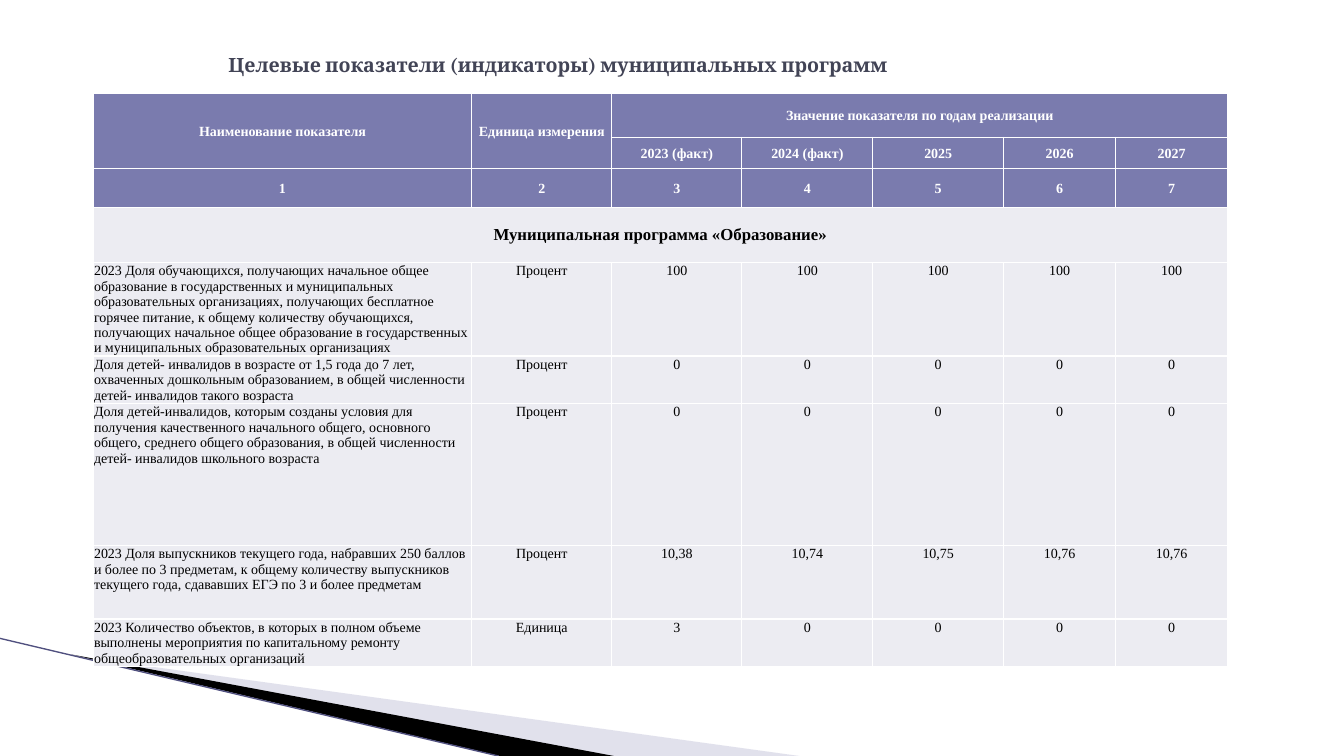
from collections import namedtuple

from lxml import etree
from pptx import Presentation, util as u
from pptx.dml.color import RGBColor
from pptx.enum import shapes, text
from pptx.oxml import ns

Box = namedtuple("Box", "left top width height")

COLORS = {
    "title": "424456", "header": "7A7BAE", "body": "ECECF2", "white": "FFFFFF",
    "black": "000000", "wedge": "B6B6D1", "line": "50507F",
}
COLUMN_WIDTHS = [270.5, 100, 93, 93.5, 93.5, 80, 80]
ROW_HEIGHTS = [31.5, 22.5, 27.5, 39.5, 57.5, 31, 101.5, 52.5, 31]
YEARS = ["2023 (факт)", "2024 (факт)", "2025", "2026", "2027"]
HEADER_ROWS = 3
SECTION_ROW = 3
INDICATORS = [
    ("2023 Доля обучающихся, получающих начальное общее образование в государственных "
     "и муниципальных образовательных организациях, получающих бесплатное горячее "
     "питание, к общему количеству обучающихся, получающих начальное общее образование "
     "в государственных и муниципальных образовательных организациях",
     "Процент", "100", "100", "100", "100", "100"),
    ("Доля детей- инвалидов в возрасте от 1,5 года до 7 лет, охваченных дошкольным "
     "образованием, в общей численности детей- инвалидов такого возраста",
     "Процент", "0", "0", "0", "0", "0"),
    ("Доля детей-инвалидов, которым созданы условия для получения качественного "
     "начального общего, основного общего, среднего общего образования, в общей "
     "численности детей- инвалидов школьного возраста",
     "Процент", "0", "0", "0", "0", "0"),
    ("2023 Доля выпускников текущего года, набравших 250 баллов и более по 3 предметам, "
     "к общему количеству выпускников текущего года, сдававших ЕГЭ по 3 и более предметам",
     "Процент", "10,38", "10,74", "10,75", "10,76", "10,76"),
    ("2023 Количество объектов, в которых в полном объеме выполнены мероприятия по "
     "капитальному ремонту общеобразовательных организаций",
     "Единица", "3", "0", "0", "0", "0"),
]


def color(name):
    return RGBColor.from_string(COLORS[name])


def write(frame, words, font="Times New Roman", size=10, bold=False, ink="black",
          align=text.PP_ALIGN.CENTER):
    para = frame.paragraphs[0]
    para.alignment = align
    span = para.add_run()
    span.text = words
    span.font.name = font
    span.font.size = u.Pt(size)
    span.font.bold = bold
    span.font.color.rgb = color(ink)


def add_wedge(page, box, points, fill, opacity=100):
    """Draw a polygon whose points are offsets from the corner of the box."""
    corners = [(u.Pt(box.left + x), u.Pt(box.top + y)) for x, y in points]
    builder = page.shapes.build_freeform(*corners[0], scale=1)
    builder.add_line_segments(corners[1:], close=True)
    wedge = builder.convert_to_shape()
    wedge.shadow.inherit = False
    wedge.line.fill.background()
    wedge.fill.solid()
    wedge.fill.fore_color.rgb = color(fill)
    if opacity < 100:
        tint = wedge.fill._xPr.find(".//" + ns.qn("a:srgbClr"))
        etree.SubElement(tint, ns.qn("a:alpha"), val=str(opacity * 1000))


def add_corner_decoration(page, box):
    bottom = box.height
    add_wedge(page, box, [(52.5, 12.5), (571, bottom), (438, bottom)], "wedge", 40)
    add_wedge(page, box, [(51, 11.5), (438.5, bottom), (357, bottom)], "black")
    line = page.shapes.add_connector(
        shapes.MSO_CONNECTOR.STRAIGHT, u.Pt(box.left), u.Pt(box.top),
        u.Pt(box.left + 356), u.Pt(box.top + bottom))
    line.line.color.rgb = color("line")
    line.line.width = u.Pt(0.95)
    etree.SubElement(line._element.spPr, ns.qn("a:effectLst"))


def add_title(page, box):
    title = page.shapes.title
    title.left, title.top, title.width, title.height = (u.Pt(side) for side in box)
    title.text_frame.vertical_anchor = text.MSO_ANCHOR.MIDDLE
    title.text_frame.word_wrap = True
    write(title.text_frame, "Целевые показатели (индикаторы) муниципальных программ",
          font="Cambria", size=14, bold=True, ink="title", align=text.PP_ALIGN.LEFT)


def format_cell(cell, fill, anchor):
    properties = cell._tc.get_or_add_tcPr()
    for side in ("lnL", "lnR", "lnT", "lnB"):
        border = etree.SubElement(properties, ns.qn("a:" + side), w=str(u.Pt(1)))
        paint = etree.SubElement(border, ns.qn("a:solidFill"))
        etree.SubElement(paint, ns.qn("a:srgbClr"), val=COLORS["white"])
    cell.fill.solid()
    cell.fill.fore_color.rgb = color(fill)
    cell.vertical_anchor = anchor
    cell.margin_left = cell.margin_right = cell.margin_top = u.Pt(0.7)
    cell.margin_bottom = 0


def add_indicator_table(page, box):
    rows = [
        ["Наименование показателя", "Единица измерения",
         "Значение показателя по годам реализации"],
        ["", "", *YEARS],
        [str(number + 1) for number in range(len(COLUMN_WIDTHS))],
        ["Муниципальная программа «Образование»"],
        *INDICATORS,
    ]
    table = page.shapes.add_table(
        len(rows), len(COLUMN_WIDTHS), *(u.Pt(side) for side in box)).table
    for column, width in zip(table.columns, COLUMN_WIDTHS):
        column.width = u.Pt(width)
    for row, height in zip(table.rows, ROW_HEIGHTS):
        row.height = u.Pt(height)

    for r, words in enumerate(rows):
        heading = r < HEADER_ROWS
        section = r == SECTION_ROW
        anchor = text.MSO_ANCHOR.MIDDLE if heading or section else text.MSO_ANCHOR.TOP
        for c in range(len(COLUMN_WIDTHS)):
            cell = table.cell(r, c)
            format_cell(cell, "header" if heading else "body", anchor)
            if c < len(words) and words[c]:
                left = c == 0 and r > SECTION_ROW
                write(cell.text_frame, words[c], size=12 if section else 10,
                      bold=heading or section, ink="white" if heading else "black",
                      align=text.PP_ALIGN.LEFT if left else text.PP_ALIGN.CENTER)

    last = len(COLUMN_WIDTHS) - 1
    for first_cell, last_cell in [((0, 0), (1, 0)), ((0, 1), (1, 1)), ((0, 2), (0, last)),
                                  ((SECTION_ROW, 0), (SECTION_ROW, last))]:
        table.cell(*first_cell).merge(table.cell(*last_cell))


def main():
    deck = Presentation()
    deck.slide_width, deck.slide_height = u.Pt(960), u.Pt(540)
    page = deck.slides.add_slide(deck.slide_layouts[5])
    add_corner_decoration(page, Box(0, 456, 571, 84))
    add_title(page, Box(156, 21.5, 648, 50))
    add_indicator_table(page, Box(66.5, 66.5, sum(COLUMN_WIDTHS), sum(ROW_HEIGHTS)))
    deck.save("out.pptx")


if __name__ == "__main__":
    main()
